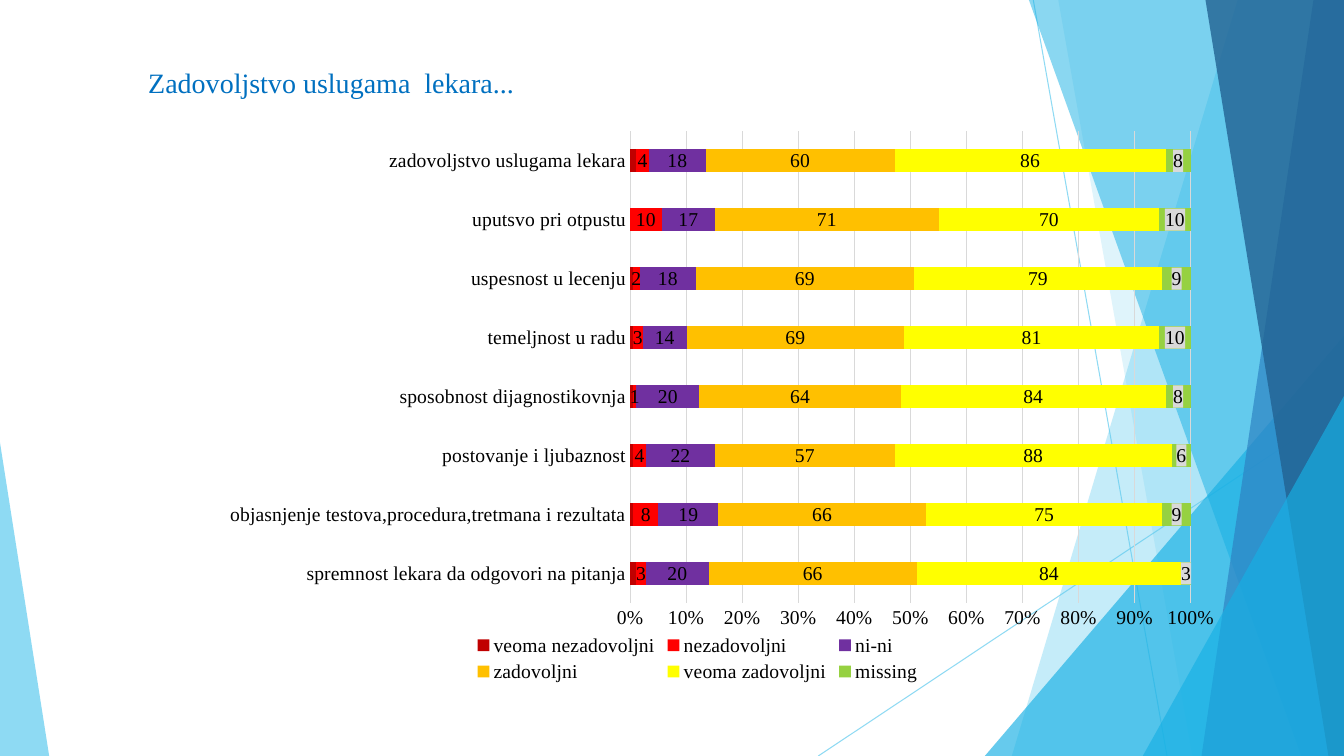
from lxml.etree import SubElement
from pptx import Presentation
from pptx.chart.data import CategoryChartData
from pptx.dml.color import RGBColor
from pptx.enum.chart import XL_CHART_TYPE as ChartType
from pptx.enum.chart import XL_LEGEND_POSITION as LegendPosition
from pptx.enum.chart import XL_TICK_MARK as TickMark
from pptx.enum.shapes import MSO_CONNECTOR as Connector
from pptx.enum.shapes import MSO_SHAPE as Shape
from pptx.enum.text import MSO_ANCHOR as Anchor
from pptx.enum.text import MSO_AUTO_SIZE as AutoSize
from pptx.enum.text import PP_ALIGN as Align
from pptx.oxml import parse_xml
from pptx.oxml.ns import nsdecls, qn
from pptx.util import Cm, Pt

COLORS = {
    "sky": "5FCBEF", "cyan": "17B0E4", "blue": "2E83C3", "navy": "226292",
    "title": "0070C0", "text": "000000", "grid": "D9D9D9",
}
FONT = "Times New Roman"
WIDTH, HEIGHT = 33.87, 19.05

CATEGORIES = [
    "spremnost lekara da odgovori na pitanja",
    "objasnjenje testova,procedura,tretmana i rezultata",
    "postovanje i ljubaznost",
    "sposobnost dijagnostikovnja",
    "temeljnost u radu",
    "uspesnost u lecenju",
    "uputsvo pri otpustu",
    "zadovoljstvo uslugama lekara",
]
SERIES = [
    ("veoma nezadovoljni", "C00000", [2, 1, 1, 1, 1, 1, None, 2]),
    ("nezadovoljni", "FF0000", [3, 8, 4, 1, 3, 2, 10, 4]),
    ("ni-ni", "7030A0", [20, 19, 22, 20, 14, 18, 17, 18]),
    ("zadovoljni", "FFC000", [66, 66, 57, 64, 69, 69, 71, 60]),
    ("veoma zadovoljni", "FFFF00", [84, 75, 88, 84, 81, 79, 70, 86]),
    ("missing", "96D141", [3, 9, 6, 8, 10, 9, 10, 8]),
]
PLOT_LAYOUT = {"x": 0.438, "y": 0.037, "w": 0.517, "h": 0.818}


def rgb(name):
    """Return the named colour."""
    return RGBColor.from_string(COLORS[name])


def set_alpha(element, percent):
    """Make the solid colour inside an element partly transparent."""
    color = next(element.iter(qn("a:srgbClr")))
    SubElement(color, qn("a:alpha")).set("val", str(percent * 1000))


def style_font(font, size, color):
    """Apply the slide's typeface with a size and colour."""
    font.name, font.size = FONT, Pt(size)
    font.color.rgb = rgb(color)


def paint(shape, color, alpha):
    """Give a shape a transparent fill without outline or shadow."""
    shape.shadow.inherit = False
    shape.fill.solid()
    shape.fill.fore_color.rgb = rgb(color)
    set_alpha(shape.fill._xPr, alpha)
    shape.line.fill.background()


def add_ray(page, start, end):
    """Draw a thin decorative line."""
    ray = page.shapes.add_connector(Connector.STRAIGHT, *map(Cm, start + end))
    ray.line.color.rgb = rgb("sky")
    ray.line.width = Pt(0.75)
    properties = ray._element.spPr
    set_alpha(properties, 70)
    SubElement(properties, qn("a:effectLst"))


def add_panel(page, top_x, bottom_x, color, alpha):
    """Draw a full-height panel with a slanted left edge."""
    builder = page.shapes.build_freeform(Cm(top_x), 0)
    corners = [(WIDTH, 0), (WIDTH, HEIGHT), (bottom_x, HEIGHT)]
    builder.add_line_segments([(Cm(x), Cm(y)) for x, y in corners], close=True)
    paint(builder.convert_to_shape(), color, alpha)


def add_corner(page, left, top, width, apex, color, alpha):
    """Draw a right triangle standing on the bottom edge."""
    corner = page.shapes.add_shape(
        Shape.ISOSCELES_TRIANGLE, Cm(left), Cm(top), Cm(width), Cm(HEIGHT - top))
    corner.adjustments[0] = apex
    paint(corner, color, alpha)


def add_backdrop(page):
    """Draw the faceted decoration from back to front."""
    add_ray(page, (26.04, 0), (29.41, HEIGHT))
    add_ray(page, (WIDTH, 10.24), (20.62, HEIGHT))
    add_panel(page, 31.19, 25.5, "sky", 36)
    add_panel(page, 26.67, 30.05, "sky", 20)
    add_corner(page, 24.82, 8.46, 9.05, 1, "cyan", 66)
    add_panel(page, 25.93, 32.79, "cyan", 50)
    add_panel(page, 33.1, 30.28, "blue", 70)
    add_panel(page, 30.38, 33.48, "navy", 80)
    add_corner(page, 28.8, 9.98, 5.07, 1, "cyan", 66)
    add_corner(page, 0, 11.15, 1.24, 0, "sky", 70)


def set_title(page, text):
    """Place and format the title placeholder."""
    box = page.shapes.title
    box.left, box.top, box.width, box.height = map(Cm, (3.48, 1.52, 10.26, 0.8))
    frame = box.text_frame
    frame.text = text
    frame.word_wrap = False
    frame.auto_size = AutoSize.NONE
    frame.vertical_anchor = Anchor.TOP
    para = frame.paragraphs[0]
    para.alignment = Align.LEFT
    style_font(para.runs[0].font, 20, "title")


def clear_properties():
    """Return chart properties with neither fill nor outline."""
    return parse_xml(f"<c:spPr {nsdecls('c', 'a')}><a:noFill/><a:ln><a:noFill/></a:ln></c:spPr>")


def fix_plot_area(chart):
    """Set the inner plot position and clear the backgrounds."""
    space = chart._chartSpace
    area = space.chart.plotArea
    for old in area.findall(qn("c:layout")):
        area.remove(old)
    modes = '<c:layoutTarget val="inner"/><c:xMode val="edge"/><c:yMode val="edge"/>'
    sizes = "".join(f'<c:{key} val="{value}"/>' for key, value in PLOT_LAYOUT.items())
    area.insert(0, parse_xml(
        f"<c:layout {nsdecls('c')}><c:manualLayout>{modes}{sizes}</c:manualLayout></c:layout>"))
    area.append(clear_properties())
    space.chart.addnext(clear_properties())


def style_axes(chart):
    """Format both axes and the gridlines."""
    for axis in (chart.category_axis, chart.value_axis):
        axis.major_tick_mark = axis.minor_tick_mark = TickMark.NONE
        style_font(axis.tick_labels.font, 14, "text")
    values = chart.value_axis
    values.tick_labels.number_format = "0%"
    values.tick_labels.number_format_is_linked = False
    values.format.line.fill.background()
    for line in (chart.category_axis.format.line, values.major_gridlines.format.line):
        line.color.rgb = rgb("grid")
        line.width = Pt(0.75)


def add_labels(series):
    """Show the values on a series and return its labels."""
    labels = series.data_labels
    labels.show_value = True
    style_font(labels.font, 14, "text")
    return labels


def shade_labels(labels):
    """Put a grey box behind data labels."""
    labels._element.find(qn("c:txPr")).addprevious(parse_xml(
        f"<c:spPr {nsdecls('c', 'a')}><a:solidFill>"
        f"<a:srgbClr val=\"{COLORS['grid']}\"/></a:solidFill></c:spPr>"))


def add_satisfaction_chart(page):
    """Add the stacked percentage bars."""
    data = CategoryChartData()
    data.categories = CATEGORIES
    for name, _, values in SERIES:
        data.add_series(name, values)
    chart = page.shapes.add_chart(
        ChartType.BAR_STACKED_100, *map(Cm, (3.91, 2.77, 27.33, 14.53)), data).chart
    style_font(chart.font, 14, "text")
    chart.has_title = False
    chart.has_legend = True
    chart.legend.position = LegendPosition.BOTTOM
    chart.legend.include_in_layout = False
    style_font(chart.legend.font, 14, "text")
    plot = chart.plots[0]
    plot.gap_width, plot.overlap, plot.vary_by_categories = 150, 100, False
    for series, (_, color, _) in zip(plot.series, SERIES):
        series.format.fill.solid()
        series.format.fill.fore_color.rgb = RGBColor.from_string(color)
    labels = [add_labels(series) for series in list(plot.series)[1:]]
    shade_labels(labels[-1])
    style_axes(chart)
    fix_plot_area(chart)


def main():
    """Build and save the slide."""
    deck = Presentation()
    deck.slide_width, deck.slide_height = Cm(WIDTH), Cm(HEIGHT)
    page = deck.slides.add_slide(deck.slide_layouts[5])
    add_backdrop(page)
    set_title(page, "Zadovoljstvo uslugama  lekara...")
    add_satisfaction_chart(page)
    deck.save("out.pptx")


if __name__ == "__main__":
    main()
